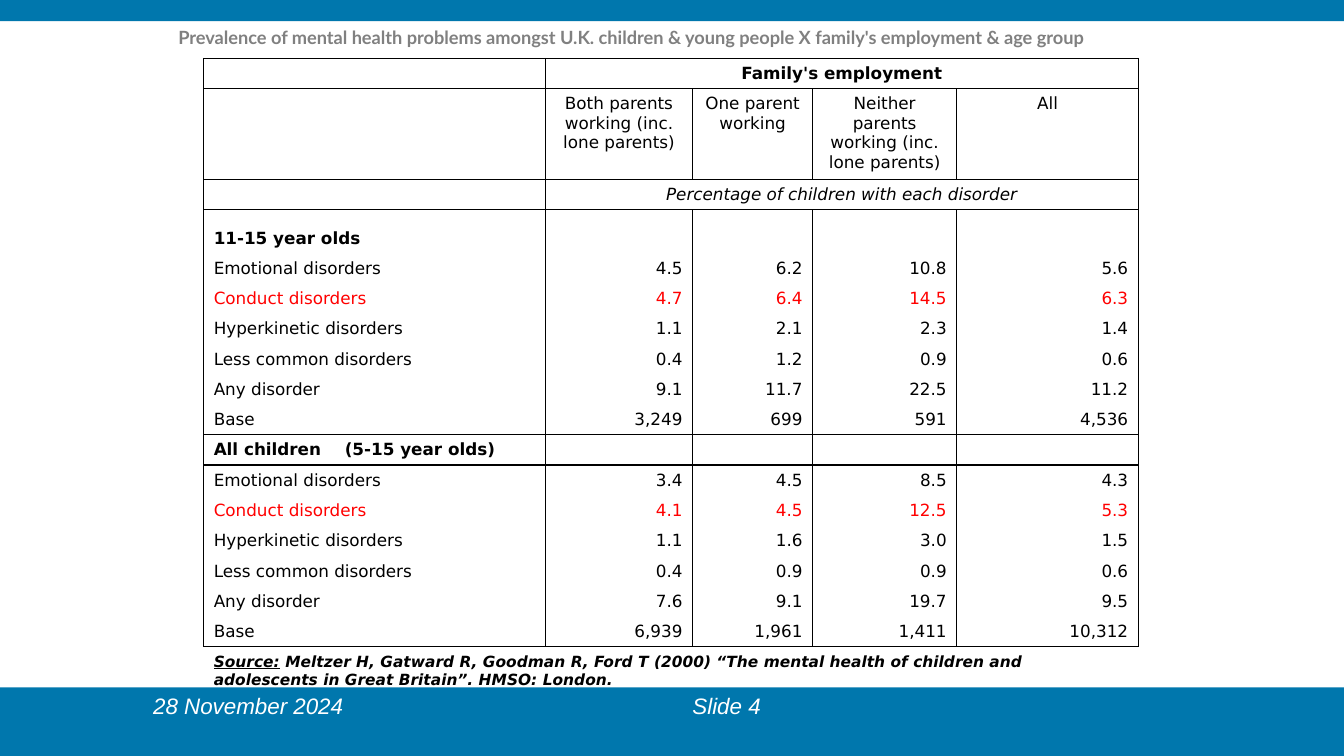
from dataclasses import dataclass

from lxml.etree import SubElement
from pptx import Presentation
from pptx.dml.color import RGBColor
from pptx.enum.shapes import MSO_SHAPE
from pptx.enum.text import MSO_ANCHOR, PP_ALIGN
from pptx.oxml.ns import qn
from pptx.util import Inches, Pt


@dataclass(frozen=True)
class Theme:
    blue: str = "0077AD"
    white: str = "FFFFFF"
    black: str = "000000"
    grey: str = "808080"
    red: str = "FF0000"
    title_size: int = 13
    table_size: int = 12
    source_size: int = 11
    footer_size: int = 16
    title_font: str = "Lato"
    table_font: str = "DejaVu Sans"
    footer_font: str = "Arial"


theme = Theme()
WIDTH, HEIGHT = 13.33, 7.5
HEADER_BOTTOM, FOOTER_TOP = 0.21, 6.82


def style_font(font, name, size, color, bold=False, italic=False):
    font.name, font.size = name, Pt(size)
    font.color.rgb = RGBColor.from_string(color)
    font.bold, font.italic = bold, italic


def add_edge(cell, tag, visible):
    properties = cell._tc.get_or_add_tcPr()
    edge = SubElement(properties, qn(f"a:{tag}"), w=str(Pt(1)))
    if visible:
        fill = SubElement(edge, qn("a:solidFill"))
        SubElement(fill, qn("a:srgbClr"), val=theme.black)
    else:
        SubElement(edge, qn("a:noFill"))


presentation = Presentation()
presentation.slide_width, presentation.slide_height = Inches(WIDTH), Inches(HEIGHT)
slide = presentation.slides.add_slide(presentation.slide_layouts[6])

# Bands at the foot and head of the slide
for top, bottom in [(FOOTER_TOP, HEIGHT), (0, HEADER_BOTTOM)]:
    band = slide.shapes.add_shape(MSO_SHAPE.RECTANGLE, 0, Inches(top),
                                  Inches(WIDTH), Inches(bottom - top))
    band.shadow.inherit = False
    band.fill.solid()
    band.fill.fore_color.rgb = RGBColor.from_string(theme.blue)
    band.line.fill.background()

# Title and footer texts
footer_style = (theme.footer_font, theme.footer_size, theme.white, False, True)
title_style = (theme.title_font, theme.title_size, theme.grey, True)
texts = [
    ("28 November 2024", 1.42, FOOTER_TOP, 4.51, 0.52, True, footer_style),
    ("Slide 4", 6.77, FOOTER_TOP, 2, 0.52, True, footer_style),
    ("Prevalence of mental health problems amongst U.K. children & young people "
     "X family's employment & age group",
     1.67, HEADER_BOTTOM, 9.83, 0.32, False, title_style),
]
for text, left, top, width, height, wrap, font_style in texts:
    box = slide.shapes.add_textbox(Inches(left), Inches(top), Inches(width), Inches(height))
    box.text_frame.word_wrap = wrap
    paragraph = box.text_frame.paragraphs[0]
    paragraph.text = text
    style_font(paragraph.font, *font_style)

# Table content
DISORDERS = ["Emotional disorders", "Conduct disorders", "Hyperkinetic disorders",
             "Less common disorders", "Any disorder", "Base"]
TEENAGERS = [
    ["4.5", "6.2", "10.8", "5.6"],
    ["4.7", "6.4", "14.5", "6.3"],
    ["1.1", "2.1", "2.3", "1.4"],
    ["0.4", "1.2", "0.9", "0.6"],
    ["9.1", "11.7", "22.5", "11.2"],
    ["3,249", "699", "591", "4,536"],
]
ALL_CHILDREN = [
    ["3.4", "4.5", "8.5", "4.3"],
    ["4.1", "4.5", "12.5", "5.3"],
    ["1.1", "1.6", "3.0", "1.5"],
    ["0.4", "0.9", "0.9", "0.6"],
    ["7.6", "9.1", "19.7", "9.5"],
    ["6,939", "1,961", "1,411", "10,312"],
]
GROUP_TITLES = ["11-15 year olds", "All children\t(5-15 year olds)"]
rows = [
    ["", "Family's employment", "", "", ""],
    ["", "Both parents working (inc. lone parents)", "One parent working",
     "Neither parents working (inc. lone parents)", "All"],
    ["", "Percentage of children with each disorder", "", "", ""],
]
for group_title, values in zip(GROUP_TITLES, [TEENAGERS, ALL_CHILDREN]):
    rows.append([group_title, "", "", "", ""])
    rows += [[name, *numbers] for name, numbers in zip(DISORDERS, values)]
rows.append([""] * 5)

# Table grid
FAMILY, PARENTS, PERCENTAGE, FIRST_GROUP, SOURCE = 0, 1, 2, 3, len(rows) - 1
SECOND_GROUP = FIRST_GROUP + len(DISORDERS) + 1
RULED_BELOW = {FAMILY, PARENTS, PERCENTAGE, SECOND_GROUP - 1, SECOND_GROUP, SOURCE - 1}
COLUMN_WIDTHS = [3.39, 1.46, 1.19, 1.43, 1.8]
ROW_HEIGHT = 0.29
TALL_ROWS = {PARENTS: 0.89, FIRST_GROUP: 0.43, SOURCE: 0.46}
heights = [TALL_ROWS.get(row, ROW_HEIGHT) for row in range(len(rows))]
table = slide.shapes.add_table(len(rows), len(COLUMN_WIDTHS), Inches(2.02), Inches(0.58),
                               Inches(sum(COLUMN_WIDTHS)), Inches(sum(heights))).table
table.first_row = table.horz_banding = False
for column, width in zip(table.columns, COLUMN_WIDTHS):
    column.width = Inches(width)
for row, height in zip(table.rows, heights):
    row.height = Inches(height)
for row, first_column in [(FAMILY, 1), (PERCENTAGE, 1), (SOURCE, 0)]:
    table.cell(row, first_column).merge(table.cell(row, 4))

# Cell text, borders and fill
for row, texts_in_row in enumerate(rows):
    for column, text in enumerate(texts_in_row):
        cell = table.cell(row, column)
        cell.vertical_anchor = MSO_ANCHOR.TOP if row == PARENTS else MSO_ANCHOR.BOTTOM
        paragraph = cell.text_frame.paragraphs[0]
        if "\t" in text:
            tabs = SubElement(paragraph._p.get_or_add_pPr(), qn("a:tabLst"))
            SubElement(tabs, qn("a:tab"), pos=str(Inches(1.3)), algn="l")
        if text:
            paragraph.add_run().text = text
        else:
            SubElement(paragraph._p, qn("a:endParaRPr"), sz=str(theme.table_size * 100))
        if column:
            paragraph.alignment = PP_ALIGN.CENTER if row < FIRST_GROUP else PP_ALIGN.RIGHT
        style_font(paragraph.font, theme.table_font, theme.table_size,
                   theme.red if texts_in_row[0] == "Conduct disorders" else theme.black,
                   bold=row == FAMILY or text in GROUP_TITLES, italic=row == PERCENTAGE)
        framed = row != SOURCE
        add_edge(cell, "lnL", framed and not cell.is_spanned)
        add_edge(cell, "lnR", framed and (not cell.is_spanned or column == 4))
        add_edge(cell, "lnT", row == 0 or row - 1 in RULED_BELOW)
        add_edge(cell, "lnB", row in RULED_BELOW)
        cell.fill.background()

# Source line
paragraph = table.cell(SOURCE, 0).text_frame.paragraphs[0]
for text, underlined in [
    ("Source:", True),
    (" Meltzer H, Gatward R, Goodman R, Ford T (2000) “The mental health of children "
     "and adolescents in Great Britain”. HMSO: London.", False),
]:
    run = paragraph.add_run()
    run.text = text
    style_font(run.font, theme.table_font, theme.source_size, theme.black, True, True)
    run.font.underline = underlined

presentation.save("out.pptx")
